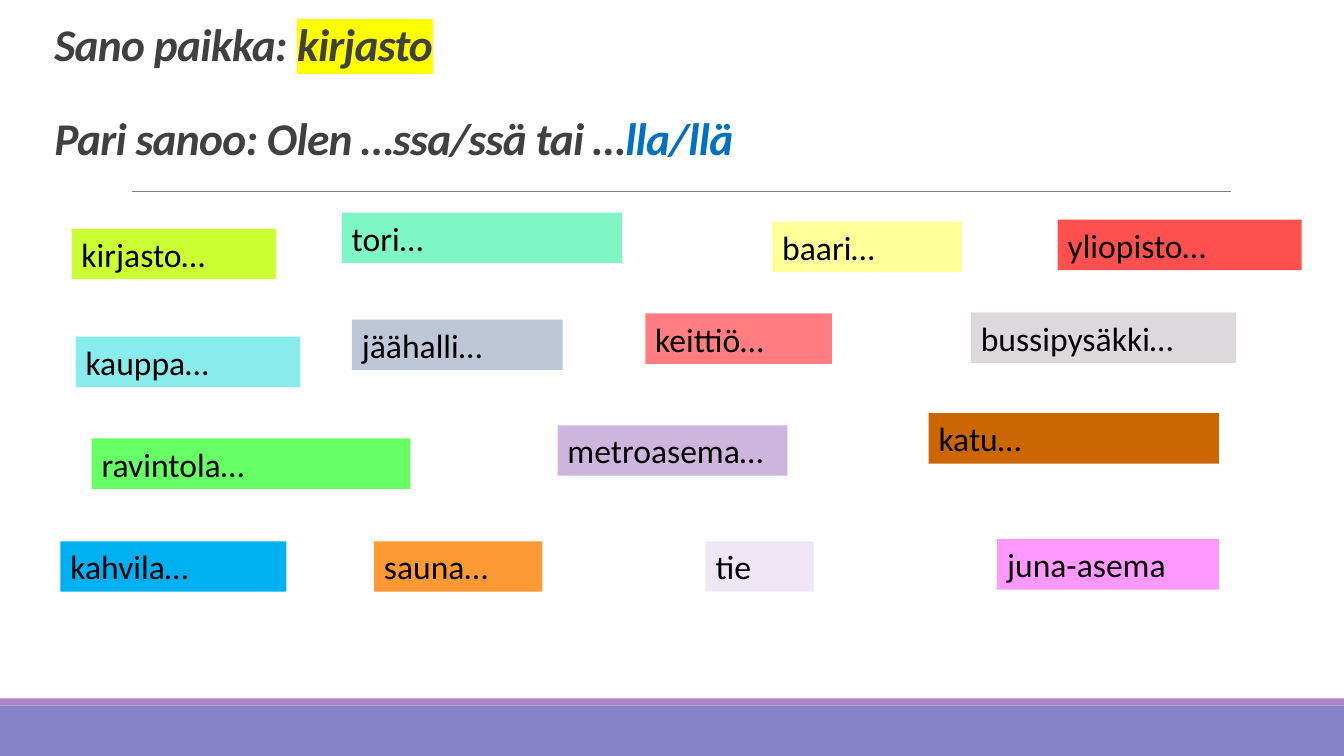
from dataclasses import dataclass

from lxml import etree
from pptx import Presentation
from pptx.dml.color import RGBColor as RGB
from pptx.enum.shapes import MSO_CONNECTOR, MSO_SHAPE
from pptx.enum.text import MSO_ANCHOR, PP_ALIGN
from pptx.oxml.ns import qn
from pptx.util import Inches, Pt


@dataclass(frozen=True)
class Theme:
    font: str = "Calibri"
    title_size: float = 32.4
    label_size: float = 24
    title: str = "404040"
    accent: str = "0070C0"
    highlight: str = "FFFF00"
    label: str = "000000"
    rule: str = "808080"
    footer: str = "8784C7"
    footer_edge: str = "AD84C6"


theme = Theme()
SLIDE_W, SLIDE_H = 13.33, 7.5
LABEL_H = 0.5

prs = Presentation()
prs.slide_width, prs.slide_height = Inches(SLIDE_W), Inches(SLIDE_H)
s = prs.slides.add_slide(prs.slide_layouts[6])


def add_block(left, top, width, height, color):
    sp = s.shapes.add_shape(MSO_SHAPE.RECTANGLE, Inches(left), Inches(top),
                            Inches(width), Inches(height))
    sp.shadow.inherit = False
    sp.fill.solid()
    sp.fill.fore_color.rgb = RGB.from_string(color)
    sp.line.fill.background()
    return sp


# Footer bands and the rule under the title
add_block(0, 7, SLIDE_W, 0.5, theme.footer)
add_block(0, 6.93, SLIDE_W, 0.07, theme.footer_edge)
rule = s.shapes.add_connector(MSO_CONNECTOR.STRAIGHT, Inches(1.31), Inches(1.9),
                              Inches(12.21), Inches(1.9))
rule.line.color.rgb = RGB.from_string(theme.rule)
rule.line.width = Pt(0.5)
etree.SubElement(rule._element.spPr, qn("a:effectLst"))

# Title: (text, colour, highlight) runs for each line
title_lines = [
    [("Sano paikka: ", theme.title, None),
     ("kirjasto", theme.title, theme.highlight)],
    [("Pari sanoo: Olen …ssa/ssä tai …", theme.title, None),
     ("lla/llä", theme.accent, None)],
]
title = s.shapes.add_textbox(Inches(0.44), Inches(0.29), Inches(11.93), Inches(1.39))
tf = title.text_frame
tf.word_wrap = True
tf.vertical_anchor = MSO_ANCHOR.BOTTOM
for i, line in enumerate(title_lines):
    p = tf.paragraphs[0] if i == 0 else tf.add_paragraph()
    p.line_spacing = 0.85
    if i:
        p.space_before = Pt(33.6)
    p.font.name = theme.font
    p.font.size = Pt(theme.title_size)
    p.font.bold = p.font.italic = True
    for text, color, highlight in line:
        r = p.add_run()
        r.text = text
        r.font.color.rgb = RGB.from_string(color)
        rPr = r._r.get_or_add_rPr()
        rPr.set("spc", "-50")
        if highlight:
            mark = etree.SubElement(rPr, qn("a:highlight"))
            etree.SubElement(mark, qn("a:srgbClr"), val=highlight)

# Place labels: text, left, top, width, fill
places = [
    ("kirjasto…", 0.71, 2.27, 2.03, "CCFF33"),
    ("tori…", 3.39, 2.11, 2.78, "7EF6C5"),
    ("baari…", 7.66, 2.2, 1.88, "FFFF99"),
    ("yliopisto…", 10.49, 2.18, 2.42, "FF5050"),
    ("kauppa…", 0.75, 3.34, 2.23, "88ECEC"),
    ("jäähalli…", 3.49, 3.17, 2.09, "BDC7D7"),
    ("keittiö…", 6.4, 3.11, 1.85, "FF7C80"),
    ("bussipysäkki…", 9.63, 3.1, 2.63, "DCD8DC"),
    ("ravintola…", 0.91, 4.35, 3.16, "66FF66"),
    ("metroasema…", 5.53, 4.22, 2.28, "CEB5DD"),
    ("katu…", 9.21, 4.1, 2.88, "CC6600"),
    ("kahvila…", 0.6, 5.37, 2.24, "00B0F0"),
    ("sauna…", 3.71, 5.37, 1.67, "FF9933"),
    ("tie", 7, 5.37, 1.07, "EFE6F4"),
    ("juna-asema", 9.89, 5.35, 2.2, "FF99FF"),
]
for text, left, top, width, color in places:
    sp = add_block(left, top, width, LABEL_H, color)
    tf = sp.text_frame
    tf.word_wrap = True
    tf.vertical_anchor = MSO_ANCHOR.TOP
    p = tf.paragraphs[0]
    p.text = text
    p.alignment = PP_ALIGN.LEFT
    p.font.name = theme.font
    p.font.size = Pt(theme.label_size)
    p.font.color.rgb = RGB.from_string(theme.label)

prs.save("out.pptx")
